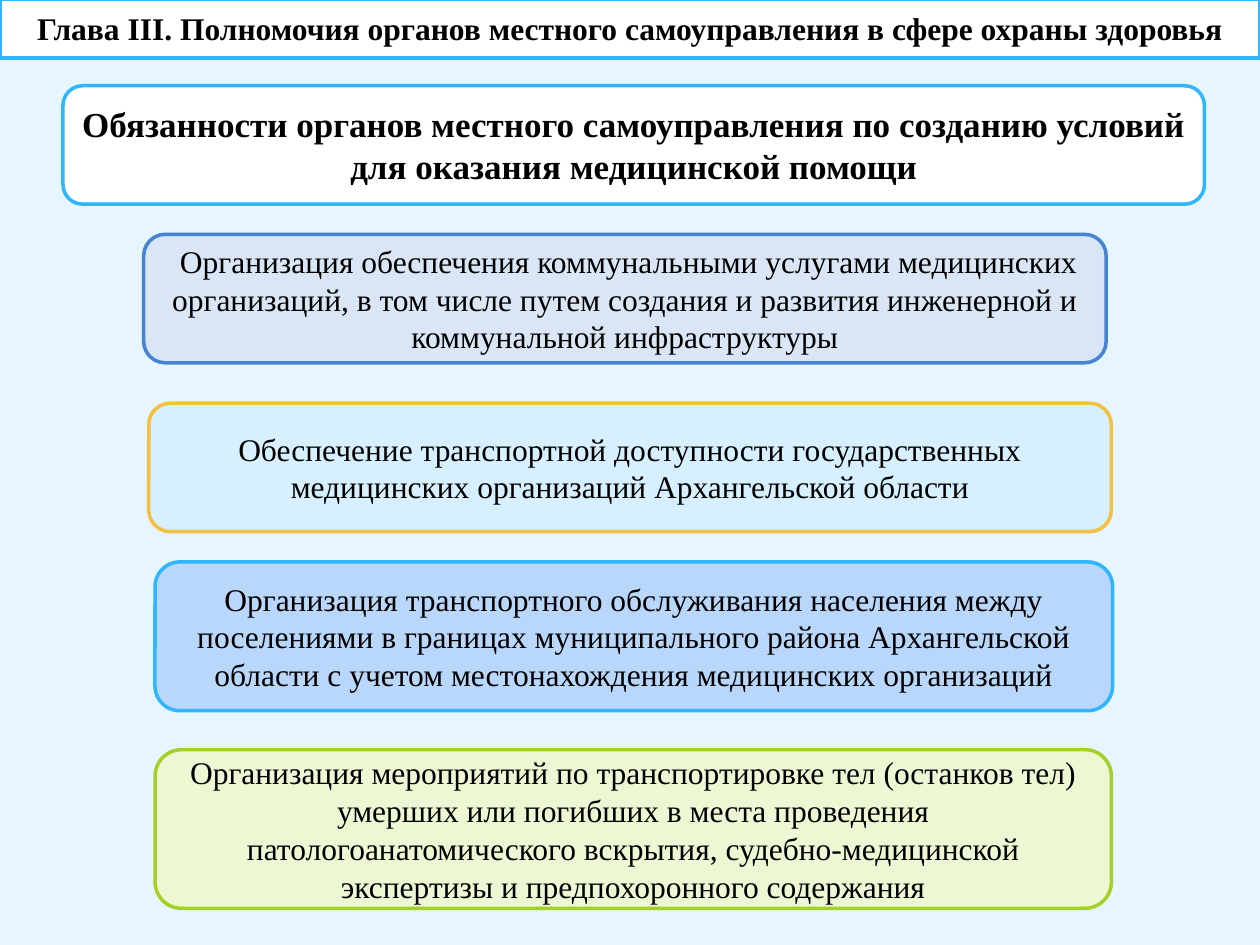
from lxml.etree import SubElement
from pptx import Presentation
from pptx.dml.color import RGBColor
from pptx.enum.shapes import MSO_SHAPE
from pptx.enum.text import MSO_ANCHOR, MSO_AUTO_SIZE, PP_ALIGN
from pptx.oxml.ns import qn
from pptx.util import Pt

COLORS = {
    "background": "E6F5FE", "text": "000000", "white": "FFFFFF", "sky": "31B6FD",
    "blue": "4584D3", "pale_blue": "DAE6F6", "gold": "F5C040", "pale_sky": "D6F0FF",
    "soft_blue": "B9D6FB", "green": "A5D028", "pale_green": "EDF7D3",
}
CHAPTER = "Глава III. Полномочия органов местного самоуправления в сфере охраны здоровья"
CHAPTER_BOX = (0, -0.7, 720, 33.8)
TOPIC = ("Обязанности органов местного самоуправления по созданию условий "
         "для оказания медицинской помощи")
TOPIC_BOX = (36, 49, 652.3, 67.7)
DUTIES = [
    (" Организация обеспечения коммунальными услугами медицинских организаций, в том числе "
     "путем создания и развития инженерной и коммунальной инфраструктуры",
     (82.1, 133.9, 550, 73.4), "pale_blue", "blue"),
    ("Обеспечение транспортной доступности государственных медицинских организаций "
     "Архангельской области",
     (85, 230.4, 550, 73.4), "pale_sky", "gold"),
    ("Организация транспортного обслуживания населения между поселениями в границах "
     "муниципального района Архангельской области с учетом местонахождения "
     "медицинских организаций",
     (88.6, 321.1, 547.2, 85), "soft_blue", "sky"),
    ("Организация мероприятий по транспортировке тел (останков тел) умерших или погибших "
     "в места проведения патологоанатомического вскрытия, судебно-медицинской экспертизы "
     "и предпохоронного содержания",
     (88.6, 428.4, 546.5, 90.7), "pale_green", "green"),
]


def rgb(name):
    return RGBColor.from_string(COLORS[name])


def write(panel, text, *, fill="white", outline="sky", size=18, bold=False):
    panel.fill.solid()
    panel.fill.fore_color.rgb = rgb(fill)
    panel.line.color.rgb = rgb(outline)
    panel.line.width = Pt(2)
    frame = panel.text_frame
    frame.word_wrap = True
    frame.auto_size = MSO_AUTO_SIZE.NONE
    frame.vertical_anchor = MSO_ANCHOR.MIDDLE
    paragraph = frame.paragraphs[0]
    paragraph.alignment = PP_ALIGN.CENTER
    run = paragraph.add_run()
    run.text = text
    run.font.name = "Times New Roman"
    run.font.size = Pt(size)
    run.font.bold = bold
    run.font.color.rgb = rgb("text")


def add_panel(slide, box):
    panel = slide.shapes.add_shape(MSO_SHAPE.ROUNDED_RECTANGLE, *map(Pt, box))
    panel.shadow.inherit = False
    return panel


def main():
    """Build the slide on the duties of local authorities in health care."""
    deck = Presentation()
    deck.slide_width, deck.slide_height = Pt(720), Pt(540)
    slide = deck.slides.add_slide(deck.slide_layouts[5])
    slide.background.fill.solid()
    slide.background.fill.fore_color.rgb = rgb("background")

    chapter = slide.shapes.title
    chapter.left, chapter.top, chapter.width, chapter.height = map(Pt, CHAPTER_BOX)
    outline = SubElement(chapter.element.spPr, qn("a:prstGeom"), prst="roundRect")
    SubElement(outline, qn("a:avLst"))
    write(chapter, CHAPTER, bold=True)

    write(add_panel(slide, TOPIC_BOX), TOPIC, size=20, bold=True)
    for duty, box, fill, border in DUTIES:
        write(add_panel(slide, box), duty, fill=fill, outline=border)
    deck.save("out.pptx")


if __name__ == "__main__":
    main()
